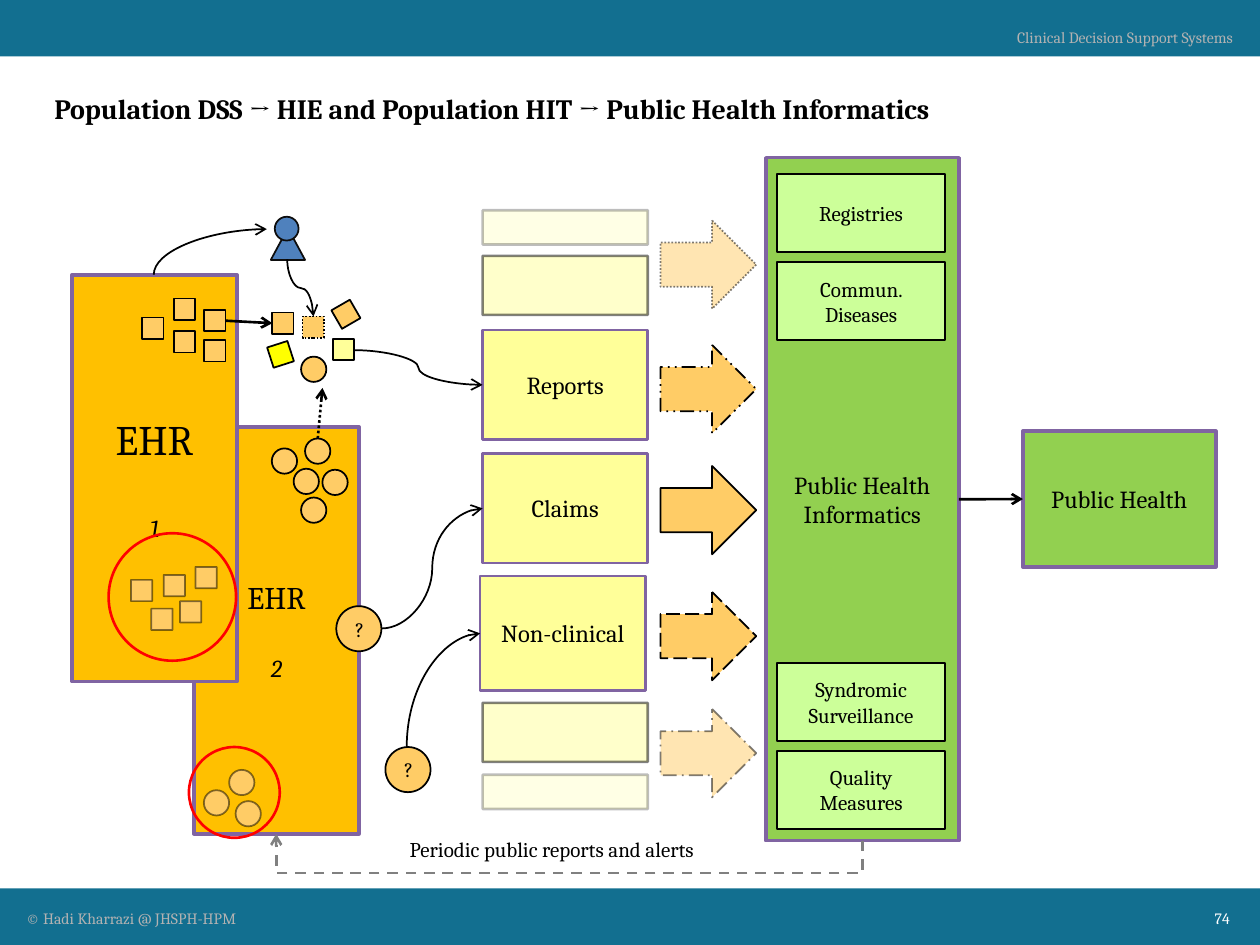
from lxml import etree
from pptx import Presentation
from pptx import util as u
from pptx.dml.color import RGBColor
from pptx.enum import dml, shapes, text
from pptx.oxml.ns import qn

FONT = "Cambria"
TEAL, PURPLE, BLACK = "126F90", "8064A2", "000000"
ORANGE, SAND, CREAM = "FFC000", "FFCC66", "FFFF99"
GREEN, LIME, GREY, BLUE = "92D050", "CCFF99", "B2B2B2", "4F81BD"
KIND, LINK = shapes.MSO_SHAPE, shapes.MSO_CONNECTOR
DASH, ALIGN = dml.MSO_LINE, text.PP_ALIGN
TOP, LEFT, RIGHT = 0, 1, 3


def paint(fill, color, opacity=100):
    fill.solid()
    fill.fore_color.rgb = RGBColor.from_string(color)
    if opacity < 100:
        srgb = fill._xPr.find(qn("a:solidFill")).find(qn("a:srgbClr"))
        etree.SubElement(srgb, qn("a:alpha")).set("val", str(opacity * 1000))


def outline(line, color, width, dash=None, opacity=100):
    paint(line.fill, color, opacity)
    line.width = u.Pt(width)
    if dash:
        line.dash_style = dash


def write(paragraph, words, size, color=BLACK, align=ALIGN.CENTER, bold=None, italic=None):
    paragraph.alignment = align
    run = paragraph.add_run()
    run.text = words
    run.font.name, run.font.size = FONT, u.Pt(size)
    run.font.bold, run.font.italic = bold, italic
    run.font.color.rgb = RGBColor.from_string(color)


def add(slide, kind, box, fill=None, line=BLACK, width=1, dash=None,
        opacity=100, line_opacity=100, rotation=0, words=None, size=12):
    shape = slide.shapes.add_shape(kind, *map(u.Cm, box))
    shape.shadow.inherit = False
    shape.rotation = rotation
    if fill:
        paint(shape.fill, fill, opacity)
    else:
        shape.fill.background()
    if line:
        outline(shape.line, line, width, dash, line_opacity)
    else:
        shape.line.fill.background()
    if words:
        shape.text_frame.vertical_anchor = text.MSO_ANCHOR.MIDDLE
        write(shape.text_frame.paragraphs[0], words, size)
    return shape


def label(slide, box, words, size, color=BLACK, align=ALIGN.CENTER):
    frame = slide.shapes.add_textbox(*map(u.Cm, box)).text_frame
    frame.word_wrap = True
    write(frame.paragraphs[0], words, size, color, align)


def finish_link(link, color, width, dash=None):
    outline(link.line, color, width, dash)
    properties = link.element.spPr
    etree.SubElement(properties.find(qn("a:ln")), qn("a:tailEnd")).set("type", "arrow")
    etree.SubElement(properties, qn("a:effectLst"))


def straight(slide, source, side, target=None, target_side=LEFT, end=(0, 0), dash=None):
    link = slide.shapes.add_connector(LINK.STRAIGHT, 0, 0, *map(u.Cm, end))
    link.begin_connect(source, side)
    if target is not None:
        link.end_connect(target, target_side)
    finish_link(link, BLACK, 1.5, dash)


def route(slide, start, end, preset="curvedConnector3", turn=0, flips="",
          color=BLACK, width=1, dash=None, bend=None):
    middle_x, middle_y = (start[0] + end[0]) / 2, (start[1] + end[1]) / 2
    half_w, half_h = abs(end[0] - start[0]) / 2, abs(end[1] - start[1]) / 2
    if turn % 180:
        half_w, half_h = half_h, half_w
    if "h" in flips:
        half_w = -half_w
    if "v" in flips:
        half_h = -half_h
    corners = (middle_x - half_w, middle_y - half_h, middle_x + half_w, middle_y + half_h)
    link = slide.shapes.add_connector(LINK.CURVE, *map(u.Cm, corners))
    properties = link.element.spPr
    properties.find(qn("a:xfrm")).set("rot", str(turn * 60000))
    geometry = properties.find(qn("a:prstGeom"))
    geometry.set("prst", preset)
    if bend is not None:
        guides = geometry.find(qn("a:avLst"))
        if guides is None:
            guides = etree.SubElement(geometry, qn("a:avLst"))
        guide = etree.SubElement(guides, qn("a:gd"))
        guide.set("name", "adj1")
        guide.set("fmla", f"val {round(bend * 100000)}")
    finish_link(link, color, width, dash)


def frame_bands(slide, width, height, band):
    for top in (0, height - band):
        add(slide, KIND.RECTANGLE, (0, top, width, band), TEAL, None)
    label(slide, (0.28, 18.19, 15.77, 0.64), "© Hadi Kharrazi @ JHSPH-HPM", 9, GREY, ALIGN.LEFT)
    label(slide, (19.66, 0.43, 5.44, 0.64), "Clinical Decision Support Systems", 9, GREY, ALIGN.RIGHT)
    label(slide, (23.39, 18.19, 1.65, 0.64), "74", 9, "FFFFFF", ALIGN.RIGHT)


def headline(slide, box):
    title = slide.shapes.title
    title.left, title.top, title.width, title.height = map(u.Cm, box)
    title.text_frame.vertical_anchor = text.MSO_ANCHOR.MIDDLE
    write(title.text_frame.paragraphs[0],
          "Population DSS → HIE and Population HIT → Public Health Informatics",
          16, align=ALIGN.LEFT, bold=True)


def ehr(slide, box, number, size, kind, side, records, faded, ring):
    x, y = box[:2]
    system = add(slide, KIND.RECTANGLE, box, ORANGE, PURPLE, 2, words="EHR", size=size)
    numeral = system.text_frame.add_paragraph()
    numeral.space_before = u.Pt(round(size * 1.17))
    write(numeral, number, 14, italic=True)
    for dx, dy in faded:
        add(slide, kind, (x + dx, y + dy, side, side), SAND, line_opacity=50)
    marks = [add(slide, kind, (x + dx, y + dy, side, side), SAND) for dx, dy in records]
    dx, dy, diameter = ring
    add(slide, KIND.OVAL, (x + dx, y + dy, diameter, diameter), None, "FF0000", 1.5)
    return marks


def exchange(slide, x, y):
    side = 0.43
    add(slide, KIND.RECTANGLE, (x, y + 0.81, side, side), "FFFF00", rotation=342.2)
    add(slide, KIND.RECTANGLE, (x + 0.66, y + 0.26, side, side), SAND, dash=DASH.ROUND_DOT)
    add(slide, KIND.RECTANGLE, (x + 1.27, y + 0.71, side, side), CREAM)
    add(slide, KIND.RECTANGLE, (x + 1.32, y, side, side), SAND, rotation=330)
    add(slide, KIND.OVAL, (x + 0.63, y + 1.07, 0.51, 0.51), SAND)
    return add(slide, KIND.RECTANGLE, (x + 0.05, y + 0.18, side, side), SAND)


def clinician(slide, x, y):
    add(slide, KIND.ISOSCELES_TRIANGLE, (x, y + 0.23, 0.69, 0.64), BLUE, "0D0D0D")
    add(slide, KIND.OVAL, (x + 0.08, y, 0.48, 0.48), BLUE, "0D0D0D")


def data_sources(slide, x, width):
    for words, dx, top, height in (("Reports", 0, 6.65, 2.21), ("Claims", 0, 9.14, 2.21),
                                   ("Non-clinical", -0.05, 11.61, 2.31)):
        add(slide, KIND.RECTANGLE, (x + dx, top, width, height), CREAM, PURPLE, 1.5,
            words=words, size=14)
    for top, height, opacity in ((4.24, 0.69, 25), (5.16, 1.19, 50), (14.17, 1.19, 50), (15.62, 0.69, 25)):
        add(slide, KIND.RECTANGLE, (x, top, width, height), CREAM, width=1.5,
            opacity=opacity, line_opacity=opacity)


def flow_arrows(slide, x):
    for top, dash, opacity in ((4.37, DASH.ROUND_DOT, 50), (6.88, DASH.DASH_DOT_DOT, 100),
                               (9.32, None, 100), (11.86, DASH.LONG_DASH, 100),
                               (14.22, DASH.LONG_DASH_DOT, 50)):
        add(slide, KIND.UP_ARROW, (x, top, 1.78, 1.93), SAND, dash=dash,
            opacity=opacity, line_opacity=opacity, rotation=90)


def informatics(slide, box):
    x, y = box[:2]
    hub = add(slide, KIND.RECTANGLE, box, GREEN, PURPLE, 2, words="Public Health Informatics", size=14)
    for words, dy in (("Registries", 0.33), ("Commun. Diseases", 2.11),
                      ("Syndromic Surveillance", 10.19), ("Quality Measures", 11.96)):
        add(slide, KIND.RECTANGLE, (x + 0.23, y + dy, 3.38, 1.57), LIME, words=words)
    return hub


def main():
    deck = Presentation()
    deck.slide_width, deck.slide_height = u.Cm(25.4), u.Cm(19.05)
    slide = deck.slides.add_slide(deck.slide_layouts[5])
    frame_bands(slide, 25.4, 19.05, 1.14)
    headline(slide, (0.84, 1.68, 23.7, 1.02))

    circles = ehr(slide, (3.91, 8.61, 3.33, 8.2), "2", 18, KIND.OVAL, 0.51,
                  [(2.24, 0.23), (2.59, 0.86), (2.01, 0.84), (2.16, 1.42), (1.57, 0.43)],
                  [(0.84, 7.54), (0.2, 7.32), (0.71, 6.91)], (-0.1, 6.45, 1.83))
    squares = ehr(slide, (1.45, 5.54, 3.33, 8.2), "1", 24, KIND.RECTANGLE, 0.43,
                  [(2.67, 0.71), (2.67, 1.32), (2.06, 1.14), (1.42, 0.86), (2.06, 0.48)],
                  [(2.49, 5.89), (1.85, 6.05), (2.18, 6.58), (1.6, 6.73), (1.19, 6.15)],
                  (0.74, 5.21, 2.57))
    shared = exchange(slide, 5.44, 6.12)
    clinician(slide, 5.46, 4.37)
    data_sources(slide, 9.73, 3.33)
    flow_arrows(slide, 13.39)
    hub = informatics(slide, (15.44, 3.18, 3.89, 13.77))
    agency = add(slide, KIND.RECTANGLE, (20.62, 8.69, 3.89, 2.74), GREEN, PURPLE, 2,
                 words="Public Health", size=14)

    straight(slide, hub, RIGHT, agency)
    straight(slide, squares[0], RIGHT, shared)
    straight(slide, circles[0], TOP, end=(6.5, 7.82), dash=DASH.ROUND_DOT)
    route(slide, (7.14, 7.06), (9.73, 7.76))
    route(slide, (7.7, 12.67), (9.73, 10.25), flips="v")
    route(slide, (8.2, 15.06), (9.68, 12.77), "curvedConnector2", 90, "hv")
    route(slide, (3.1, 5.54), (5.38, 4.62), "curvedConnector2", 90, "hv")
    route(slide, (5.79, 5.23), (6.32, 6.38), turn=270, flips="h")
    route(slide, (17.39, 16.95), (5.57, 16.81), "bentConnector3", 90, "h",
          "808080", 1.5, DASH.DASH, -4.63)
    for x, y in ((6.78, 12.22), (7.77, 15.06)):
        add(slide, KIND.OVAL, (x, y, 0.91, 0.91), SAND, words="?")
    label(slide, (6.58, 16.74, 9.09, 0.76), "Periodic public reports and alerts", 12)
    deck.save("out.pptx")


if __name__ == "__main__":
    main()
